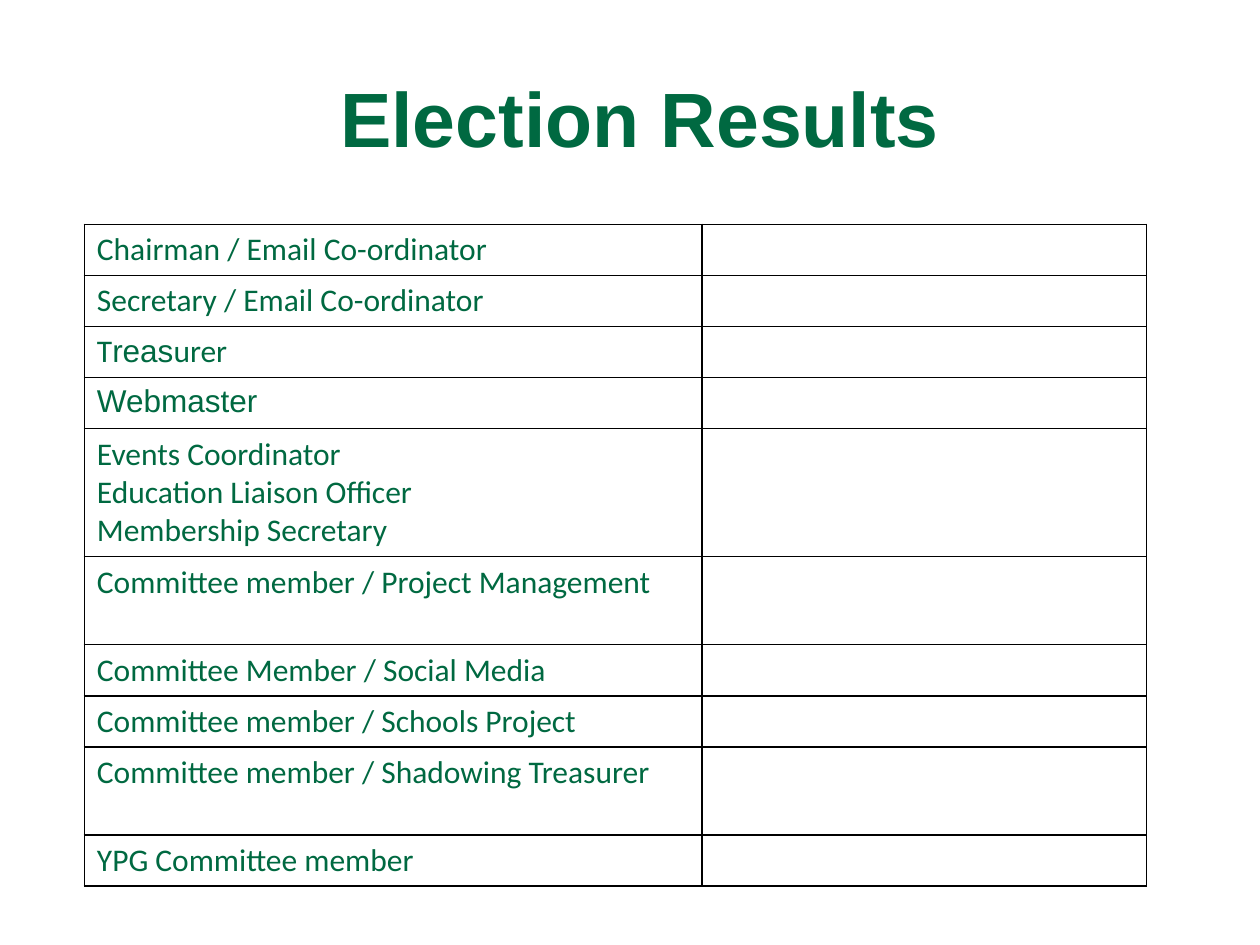
"""Build the election results slide with its table of committee roles."""
from dataclasses import dataclass

from lxml import etree
from pptx import Presentation
from pptx.dml.color import RGBColor
from pptx.enum.text import MSO_ANCHOR, PP_ALIGN
from pptx.oxml.ns import qn
from pptx.table import Table, _Cell
from pptx.util import Pt

CENTER = PP_ALIGN.CENTER
LEFT = PP_ALIGN.LEFT
MIDDLE = MSO_ANCHOR.MIDDLE
TITLE_ONLY = 5
GREEN = "006941"
BLACK = "000000"
SINGLE, TRIPLE, TALL = 29.2, 72.6, 50.3
COLUMN_WIDTHS = (353, 254)


@dataclass(frozen=True)
class TextRun:
    text: str
    font: str = "Calibri"


@dataclass(frozen=True)
class Role:
    lines: tuple[tuple[TextRun, ...], ...]
    height: float = SINGLE


def role(*names: str, height: float = SINGLE, font: str = "Calibri") -> Role:
    """Describe a row whose lines each use one font."""
    return Role(tuple((TextRun(name, font),) for name in names), height)


ROLES = (
    role("Chairman / Email Co-ordinator"),
    role("Secretary / Email Co-ordinator"),
    Role(((TextRun("T"), TextRun("reas", "Arial"), TextRun("urer")),)),
    role("Webmaster", font="Arial"),
    role("Events Coordinator", "Education Liaison Officer", "Membership Secretary",
         height=TRIPLE),
    role("Committee member / Project Management", height=TALL),
    role("Committee Member / Social Media"),
    role("Committee member / Schools Project"),
    role("Committee member / Shadowing Treasurer", height=TALL),
    role("YPG Committee member"),
)


def color(value: str) -> RGBColor:
    """Turn a hex string into a colour."""
    return RGBColor.from_string(value)


def write_text(text_frame, lines, *, size: float, bold: bool = False, align=LEFT) -> None:
    """Write lines of runs into a text frame."""
    for index, line in enumerate(lines):
        paragraph = text_frame.add_paragraph() if index else text_frame.paragraphs[0]
        paragraph.alignment = align
        for text_run in line:
            run = paragraph.add_run()
            run.text = text_run.text
            run.font.name = text_run.font
            run.font.size = Pt(size)
            run.font.bold = bold
            run.font.color.rgb = color(GREEN)


def format_cell(cell: _Cell) -> None:
    """Give a cell thin black borders and no fill."""
    properties = cell._tc.get_or_add_tcPr()
    for side in ("a:lnL", "a:lnR", "a:lnT", "a:lnB"):
        line = etree.SubElement(properties, qn(side), w=str(Pt(1)))
        fill = etree.SubElement(line, qn("a:solidFill"))
        etree.SubElement(fill, qn("a:srgbClr"), val=BLACK)
    cell.fill.background()


def fill_table(table: Table) -> None:
    """Size the table, format its cells and write the roles."""
    table.first_row = False
    table.horz_banding = False
    for column, width in zip(table.columns, COLUMN_WIDTHS):
        column.width = Pt(width)
    for row, entry in zip(table.rows, ROLES):
        row.height = Pt(entry.height)
        for cell in row.cells:
            format_cell(cell)
        write_text(row.cells[0].text_frame, entry.lines, size=18)


def main() -> None:
    """Create and save the presentation."""
    presentation = Presentation()
    presentation.slide_width, presentation.slide_height = Pt(720), Pt(540)
    slide = presentation.slides.add_slide(presentation.slide_layouts[TITLE_ONLY])

    title = slide.shapes.title
    title.left, title.top, title.width, title.height = Pt(184.3), Pt(21.6), Pt(363), Pt(90)
    title.text_frame.vertical_anchor = MIDDLE
    write_text(title.text_frame, ((TextRun("Election Results", "Arial"),),),
               size=44, bold=True, align=CENTER)

    frame = slide.shapes.add_table(
        len(ROLES), len(COLUMN_WIDTHS), Pt(48.2), Pt(128.2),
        Pt(sum(COLUMN_WIDTHS)), Pt(sum(entry.height for entry in ROLES)))
    fill_table(frame.table)
    presentation.save("out.pptx")


if __name__ == "__main__":
    main()
